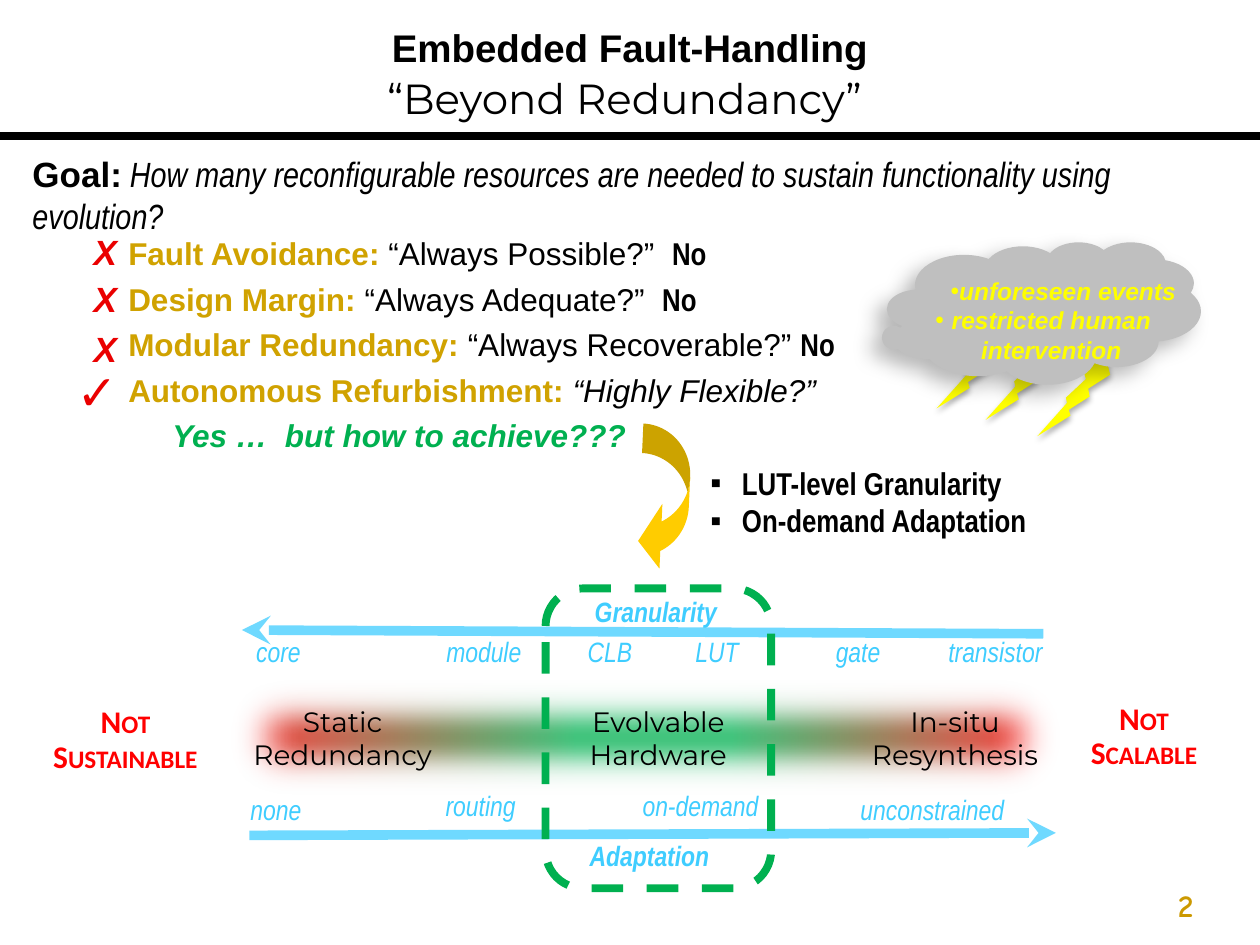
from lxml import etree
from pptx import Presentation
from pptx import util as u
from pptx.dml.color import RGBColor
from pptx.enum import dml, shapes, text
from pptx.oxml import ns

BLACK = RGBColor(0, 0, 0)
GOLD = RGBColor(0xD0, 0xA2, 0x00)
NUMBER_GOLD = RGBColor(0xCC, 0x99, 0x00)
ARROW_GOLD = RGBColor(0xFF, 0xCC, 0x00)
GREEN = RGBColor(0x00, 0xB0, 0x50)
MARK_RED = RGBColor(0xEA, 0, 0)
RED = RGBColor(0xFF, 0, 0)
YELLOW = RGBColor(0xFF, 0xFF, 0)
GREY = RGBColor(0xBF, 0xBF, 0xBF)
SKY = RGBColor(0x3F, 0xCD, 0xFF)
NARROW = "Arial Narrow"
CENTER = text.PP_ALIGN.CENTER
LEFT = text.PP_ALIGN.LEFT


def add_node(parent, tag, **attributes):
    """Append a DrawingML element and return it."""
    node = etree.SubElement(parent, ns.qn(tag))
    for name, value in attributes.items():
        node.set(name, str(value))
    return node


def add_color(parent, color, opacity=100):
    """Append an RGB colour with its opacity in percent."""
    node = add_node(parent, "a:srgbClr", val=color)
    if opacity < 100:
        add_node(node, "a:alpha", val=opacity * 1000)


def format_font(font, size=16, name="Arial", color=BLACK, bold=False, italic=False, small=False):
    """Set the look of a font."""
    font.size, font.name = u.Pt(size), name
    font.bold, font.italic = bold, italic
    font.color.rgb = color
    if small:
        font._element.set("cap", "small")


def write_paragraph(paragraph, runs, align=CENTER, spacing=None, before=0,
                    margin=0, indent=0, bullet=None, **font):
    """Write runs, each a string or a (string, font changes) pair."""
    paragraph.alignment = align
    paragraph.space_before = u.Pt(before)
    if spacing:
        paragraph.line_spacing = spacing
    properties = paragraph._p.get_or_add_pPr()
    properties.set("marL", str(u.Inches(margin)))
    properties.set("indent", str(u.Inches(indent)))
    if bullet:
        add_node(properties, "a:buFont", typeface="Arial")
        add_node(properties, "a:buChar", char=bullet)
    for item in [runs] if isinstance(runs, str) else runs:
        words, changes = (item, {}) if isinstance(item, str) else item
        run = paragraph.add_run()
        run.text = words
        format_font(run.font, **{**font, **changes})


def add_text(slide, box, *paragraphs, wrap=True, before=0, **style):
    """Add a text box with one paragraph for each entry."""
    frame = slide.shapes.add_textbox(*map(u.Inches, box)).text_frame
    frame.word_wrap = wrap
    for index, runs in enumerate(paragraphs):
        paragraph = frame.add_paragraph() if index else frame.paragraphs[0]
        write_paragraph(paragraph, runs, before=before if index else 0, **style)
    return frame


def add_shape(slide, kind, box, fill=None, adjustments=(), rotation=0, flip=False):
    """Add a preset shape without outline."""
    shape = slide.shapes.add_shape(kind, *map(u.Inches, box))
    shape.shadow.inherit = False
    shape.line.fill.background()
    shape.rotation = rotation
    for index, value in enumerate(adjustments):
        shape.adjustments[index] = value
    if flip:
        shape.element.spPr.find(ns.qn("a:xfrm")).set("flipH", "1")
    if fill is None:
        shape.fill.background()
    else:
        shape.fill.solid()
        shape.fill.fore_color.rgb = fill
    return shape


def add_shadow(shape, opacity, blur, distance, angle):
    """Give a shape an outer shadow, lengths in points."""
    effects = shape.element.spPr.find(ns.qn("a:effectLst"))
    shadow = add_node(effects, "a:outerShdw", blurRad=int(u.Pt(blur)), dist=int(u.Pt(distance)),
                      dir=angle * 60000, algn="ctr", rotWithShape=0)
    add_color(shadow, BLACK, opacity)


def add_line(slide, start, end, color, width, opacity=100, arrow=None):
    """Add a straight line, with an arrowhead if its end is named."""
    points = map(u.Inches, (*start, *end))
    line = slide.shapes.add_connector(shapes.MSO_CONNECTOR.STRAIGHT, *points)
    line.line.color.rgb = color
    line.line.width = u.Pt(width)
    if opacity < 100:
        add_node(line.line._ln.find(".//" + ns.qn("a:srgbClr")), "a:alpha", val=opacity * 1000)
    if arrow:
        add_node(line.line._ln, arrow, type="stealth")
    add_node(line._element.spPr, "a:effectLst")


def add_title(slide):
    """Fill the title and the heading above it."""
    title = slide.shapes.title
    title.left, title.top, title.width, title.height = map(u.Inches, (0, 0.36, 9.91, 0.83))
    title.text_frame.vertical_anchor = text.MSO_ANCHOR.MIDDLE
    write_paragraph(title.text_frame.paragraphs[0], "“Beyond Redundancy”", size=24, name="Montserrat")
    add_text(slide, (0, 0.14, 10, 0.47), "Embedded Fault-Handling", size=22, bold=True)
    add_line(slide, (0, 1.08), (10, 1.08), BLACK, 4.5)


def add_strategies(slide):
    """Add the goal and the marked list of strategies."""
    question = "How many reconfigurable resources are needed to sustain functionality using evolution?"
    add_text(slide, (0.16, 1.16, 9.84, 0.44),
             [("Goal:", {"bold": True}), (" ", {"size": 16}), (question, {"name": NARROW, "italic": True})],
             wrap=False, align=LEFT, size=20)
    heading = {"color": GOLD, "bold": True}
    no = ("No", {"name": NARROW, "bold": True})
    rows = [
        [("Fault Avoidance: ", heading), "“Always Possible?”  ", no],
        [("Design Margin: ", heading), "“Always Adequate?”  ", no],
        [("Modular Redundancy: ", heading), "“Always Recoverable?” ", no],
        [("Autonomous Refurbishment: ", heading), ("“Highly Flexible?”", {"italic": True})],
    ]
    frame = add_text(slide, (0.92, 1.81, 6.2, 1.86), *rows, align=LEFT, size=18, before=4.4)
    write_paragraph(frame.add_paragraph(), "Yes …  but how to achieve???", align=LEFT, before=4.4,
                    margin=0.35, size=18, color=GREEN, bold=True, italic=True)
    marks = {"wrap": False, "color": MARK_RED, "bold": True, "italic": True}
    for top in (1.78, 2.15, 2.55):
        add_text(slide, (0.64, top, 0.39, 0.44), "X", size=20, **marks)
    add_text(slide, (0.51, 2.82, 0.51, 0.57), "✓", size=28, **marks)


def add_storm(slide):
    """Add the cloud with its lightning bolts."""
    for left, top in ((8.4, 2.73), (7.6, 2.51), (7.99, 2.6)):
        bolt = add_shape(slide, shapes.MSO_SHAPE.LIGHTNING_BOLT, (left, top, 0.31, 0.84),
                         YELLOW, rotation=25.6, flip=True)
        add_shadow(bolt, 32, 3.5, 2.2, 90)
    cloud = add_shape(slide, shapes.MSO_SHAPE.CLOUD_CALLOUT, (7.04, 1.92, 2.49, 1.13),
                      GREY, adjustments=(-0.47, 0.17))
    add_shadow(cloud, 28, 11.8, 8, 141)
    style = {"bullet": "•", "size": 14, "color": YELLOW, "bold": True, "italic": True}
    frame = add_text(slide, (6.9, 2.14, 2.76, 1.04), "unforeseen events", margin=0.19, indent=0.13, **style)
    write_paragraph(frame.add_paragraph(), "restricted human intervention",
                    margin=0.13, indent=-0.13, **style)


def add_spectrum_bar(slide):
    """Add the soft-edged red-green-red bar."""
    bar = add_shape(slide, shapes.MSO_SHAPE.RECTANGLE, (1.72, 5.29, 6.8, 1.12))
    bar.fill.gradient()
    bar.fill.gradient_angle = 0
    stops = bar.element.spPr.find(".//" + ns.qn("a:gsLst"))
    for stop in list(stops):
        stops.remove(stop)
    for position, color in ((2, RED), (42, GREEN), (50, GREEN), (60, GREEN), (96, RED)):
        add_color(add_node(stops, "a:gs", pos=position * 1000), color)
    add_node(bar.element.spPr.find(ns.qn("a:effectLst")), "a:softEdge", rad=int(u.Pt(25)))


def add_spectrum(slide):
    """Add the granularity and adaptation scales around the bar."""
    add_spectrum_bar(slide)
    warning = {"spacing": 0.9, "size": 18, "name": "Calibri", "color": RED, "bold": True, "small": True}
    add_text(slide, (0.27, 5.56, 1.45, 0.65), "Not Sustainable", **warning)
    add_text(slide, (8.3, 5.53, 1.56, 0.65), "Not", "Scalable", **warning)
    add_line(slide, (1.92, 5), (8.28, 5.03), SKY, 5.5, 75, "a:headEnd")
    add_line(slide, (1.98, 6.63), (8.38, 6.61), SKY, 5.5, 75, "a:tailEnd")
    label = {"name": NARROW, "color": SKY, "italic": True}
    for words, left, top in (("Granularity", 3.94, 4.67), ("Adaptation", 3.89, 6.61)):
        add_text(slide, (left, top, 2.53, 0.37), words, bold=True, **label)
    levels = (("core", 1.7), ("module", 3.33), ("CLB", 4.33), ("LUT", 5.18), ("gate", 6.3), ("transistor", 7.39))
    for words, left in levels:
        add_text(slide, (left, 4.99, 1.02, 0.37), words, **label)
    for words, left, top, width in (("none", 1.68, 6.24, 1.02), ("routing", 3.1, 6.21, 1.43),
                                    ("on-demand", 4.98, 6.21, 1.16), ("unconstrained", 6.67, 6.24, 1.46)):
        add_text(slide, (left, top, width, 0.37), words, **label)
    for first, second, left, width in (("Static", "Redundancy", 1.83, 1.78), ("Evolvable", "Hardware", 4.5, 1.45),
                                       ("In-situ", "Resynthesis", 6.67, 1.82)):
        add_text(slide, (left, 5.54, width, 0.64), first, second, name="Montserrat")
    focus = add_shape(slide, shapes.MSO_SHAPE.ROUNDED_RECTANGLE, (4.33, 4.67, 1.79, 2.38))
    focus.line.color.rgb = GREEN
    focus.line.width = u.Pt(4.5)
    focus.line.dash_style = dml.MSO_LINE.DASH


def main():
    """Build and save the slide."""
    presentation = Presentation()
    presentation.slide_width, presentation.slide_height = u.Inches(10), u.Inches(7.5)
    slide = presentation.slides.add_slide(presentation.slide_layouts[5])
    add_title(slide)
    add_strategies(slide)
    add_storm(slide)
    add_shape(slide, shapes.MSO_SHAPE.CURVED_RIGHT_ARROW, (5.08, 3.37, 0.39, 1.19), ARROW_GOLD,
              adjustments=(0.6, 1.32, 0.46), rotation=2.6, flip=True)
    add_text(slide, (5.54, 3.63, 3.88, 1.04), "LUT-level Granularity", "On-demand Adaptation", align=LEFT,
             margin=0.25, indent=-0.25, bullet="▪", size=18, name=NARROW, bold=True)
    add_spectrum(slide)
    add_text(slide, (7.49, 6.98, 2.08, 0.5), "2", align=text.PP_ALIGN.RIGHT,
             size=18, name="Comic Neue", color=NUMBER_GOLD, bold=True)
    presentation.save("out.pptx")


if __name__ == "__main__":
    main()
